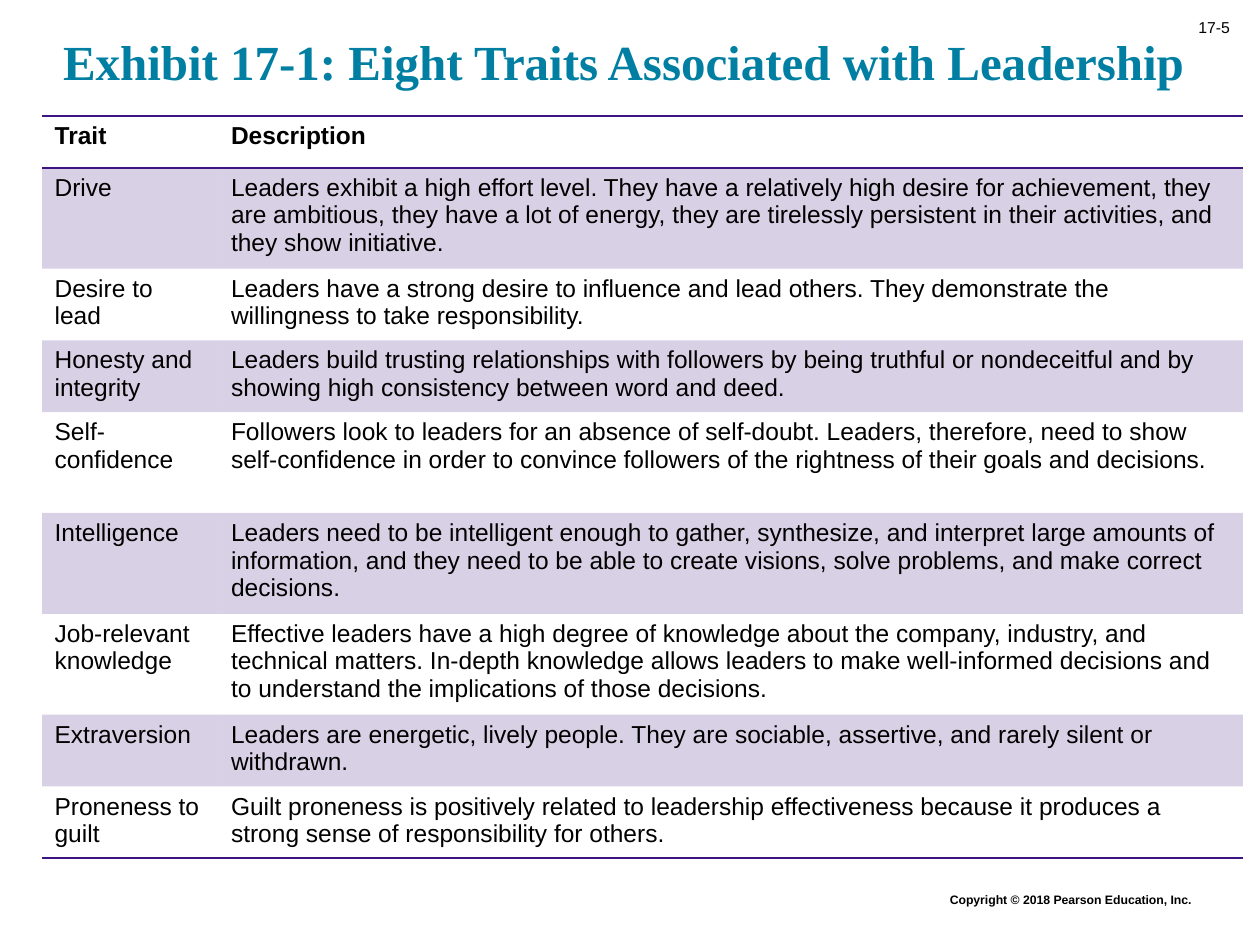
from dataclasses import dataclass
from lxml import etree
from pptx import Presentation
from pptx.dml.color import RGBColor
from pptx.enum.text import MSO_ANCHOR, MSO_AUTO_SIZE, PP_ALIGN
from pptx.oxml.ns import qn
from pptx.util import Pt

LEFT, RIGHT = PP_ALIGN.LEFT, PP_ALIGN.RIGHT
TOP, MIDDLE = MSO_ANCHOR.TOP, MSO_ANCHOR.MIDDLE
NO_FIT = MSO_AUTO_SIZE.NONE
PLAIN_TABLE = "{2D5ABB26-0587-4C30-8999-92F81FD0307C}"
TITLE_ONLY = 5


@dataclass(frozen=True)
class Theme:
    title: str = "007FA3"
    text: str = "000000"
    accent: str = "3C1581"
    band_alpha: int = 20
    title_font: str = "Times New Roman"
    body_font: str = "Arial"
    title_size: float = 28
    body_size: float = 14
    number_size: float = 9
    footer_size: float = 7


THEME = Theme()
TITLE = "Exhibit 17-1: Eight Traits Associated with Leadership"
HEADER = ("Trait", "Description")
TRAITS = [
    ("Drive", "Leaders exhibit a high effort level. They have a relatively high desire for "
     "achievement, they are ambitious, they have a lot of energy, they are tirelessly "
     "persistent in their activities, and they show initiative."),
    ("Desire to lead", "Leaders have a strong desire to influence and lead others. They "
     "demonstrate the willingness to take responsibility."),
    ("Honesty and integrity", "Leaders build trusting relationships with followers by being "
     "truthful or nondeceitful and by showing high consistency between word and deed."),
    ("Self-confidence", "Followers look to leaders for an absence of self-doubt. Leaders, "
     "therefore, need to show self-confidence in order to convince followers of the "
     "rightness of their goals and decisions."),
    ("Intelligence", "Leaders need to be intelligent enough to gather, synthesize, and "
     "interpret large amounts of information, and they need to be able to create visions, "
     "solve problems, and make correct decisions."),
    ("Job-relevant knowledge", "Effective leaders have a high degree of knowledge about the "
     "company, industry, and technical matters. In-depth knowledge allows leaders to make "
     "well-informed decisions and to understand the implications of those decisions."),
    ("Extraversion", "Leaders are energetic, lively people. They are sociable, assertive, "
     "and rarely silent or withdrawn."),
    ("Proneness to guilt", "Guilt proneness is positively related to leadership "
     "effectiveness because it produces a strong sense of responsibility for others."),
]
COLUMN_WIDTHS = (100.8, 585.4)
HEADER_HEIGHT, TWO_LINES, THREE_LINES = 29.5, 41, 57.6
ROW_HEIGHTS = (HEADER_HEIGHT, THREE_LINES, TWO_LINES, TWO_LINES, THREE_LINES,
               THREE_LINES, THREE_LINES, TWO_LINES, TWO_LINES)


def apply(target, values):
    for name, value in values.items():
        setattr(target, name, value)


def write(tf, text, size, font=THEME.body_font, color=THEME.text, bold=False, align=LEFT):
    p = tf.paragraphs[0]
    p.alignment = align
    r = p.add_run()
    r.text = text
    apply(r.font, {"size": Pt(size), "name": font, "bold": bold})
    r.font.color.rgb = RGBColor.from_string(color)


def add_title(s):
    sp = s.shapes.title
    apply(sp, {"left": Pt(36), "top": Pt(18), "width": Pt(648), "height": Pt(42)})
    tf = sp.text_frame
    margins = dict.fromkeys(("margin_left", "margin_top", "margin_right", "margin_bottom"), 0)
    apply(tf, {**margins, "vertical_anchor": TOP, "auto_size": NO_FIT, "word_wrap": True})
    write(tf, TITLE, THEME.title_size, THEME.title_font, THEME.title, True)


def add_label(s, box, text, size, bold=False, anchor=TOP):
    tf = s.shapes.add_textbox(*map(Pt, box)).text_frame
    apply(tf, {"word_wrap": True, "vertical_anchor": anchor})
    write(tf, text, size, bold=bold, align=RIGHT)


def add_border(cell, side):
    ln = etree.Element(qn(f"a:ln{side}"), w=str(Pt(1)))
    fill = etree.SubElement(ln, qn("a:solidFill"))
    etree.SubElement(fill, qn("a:srgbClr"), val=THEME.accent)
    return ln


def fill_cell(cell, banded):
    if not banded:
        cell.fill.background()
        return
    cell.fill.solid()
    cell.fill.fore_color.rgb = RGBColor.from_string(THEME.accent)
    color = cell._tc.tcPr.find(".//" + qn("a:srgbClr"))
    etree.SubElement(color, qn("a:alpha"), val=str(THEME.band_alpha * 1000))


def add_traits_table(s):
    rows = [HEADER, *TRAITS]
    frame = s.shapes.add_table(len(rows), len(HEADER), Pt(24), Pt(66.4),
                               Pt(sum(COLUMN_WIDTHS)), Pt(sum(ROW_HEIGHTS)))
    table = frame.table
    table._tbl.tblPr.find(qn("a:tableStyleId")).text = PLAIN_TABLE
    apply(table, {"first_row": True, "horz_banding": False})
    for column, width in zip(table.columns, COLUMN_WIDTHS):
        column.width = Pt(width)
    borders = {0: "TB", len(rows) - 1: "B"}
    for i, (texts, height) in enumerate(zip(rows, ROW_HEIGHTS)):
        table.rows[i].height = Pt(height)
        for cell, text in zip(table.rows[i].cells, texts):
            write(cell.text_frame, text, THEME.body_size, bold=i == 0)
            fill_cell(cell, i % 2 == 1)
            for position, side in enumerate(borders.get(i, "")):
                cell._tc.tcPr.insert(position, add_border(cell, side))


def main():
    prs = Presentation()
    apply(prs, {"slide_width": Pt(720), "slide_height": Pt(540)})
    s = prs.slides.add_slide(prs.slide_layouts[TITLE_ONLY])
    add_label(s, (126, 506.2, 562, 15.8), "Copyright © 2018 Pearson Education, Inc.",
              THEME.footer_size, bold=True)
    add_label(s, (666.7, 8.6, 43.2, 14.4), "17-5", THEME.number_size, anchor=MIDDLE)
    add_title(s)
    add_traits_table(s)
    prs.save("out.pptx")


if __name__ == "__main__":
    main()
